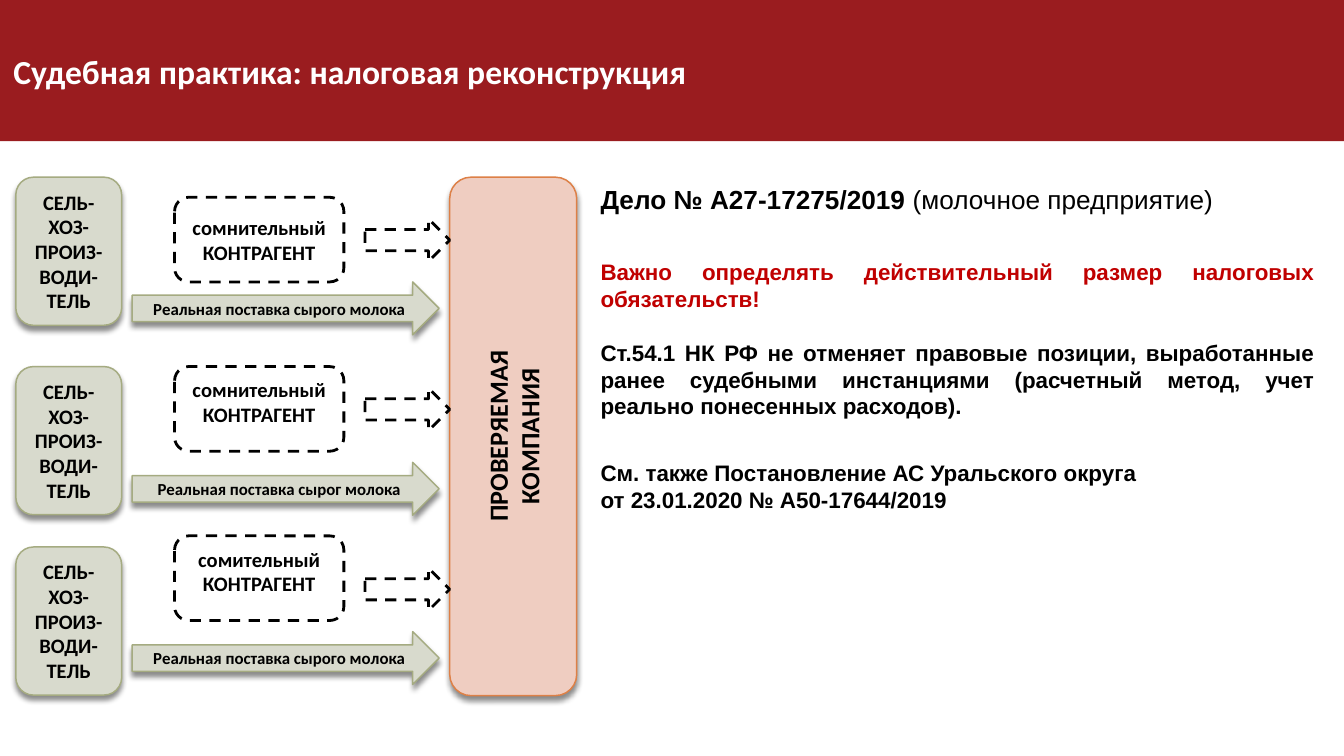
from lxml.etree import SubElement
from pptx import Presentation
from pptx.dml.color import RGBColor
from pptx.enum.dml import MSO_LINE
from pptx.enum.shapes import MSO_SHAPE
from pptx.enum.text import MSO_ANCHOR, PP_ALIGN
from pptx.oxml.ns import qn
from pptx.util import Cm, Pt

COLORS = {
    "banner": "9A1C1F",
    "white": "FFFFFF",
    "black": "000000",
    "accent": "C00000",
    "farm": "D8DACD",
    "farm_line": "A5AB81",
    "company": "EFCDC1",
    "company_line": "DD8047",
}


def set_text(frame, text, size, font="Calibri", color="black",
             align=PP_ALIGN.CENTER, anchor=MSO_ANCHOR.MIDDLE):
    """Fill the first paragraph of a frame with bold text."""
    frame.word_wrap = True
    frame.vertical_anchor = anchor
    para = frame.paragraphs[0]
    para.text = text
    para.alignment = align
    para.font.name = font
    para.font.size = Pt(size)
    para.font.bold = True
    para.font.color.rgb = RGBColor.from_string(COLORS[color])
    return para


def add_block(kind, left, top, width, height, fill=None):
    """Add a dashed white shape, or a filled one with a soft shadow."""
    block = slide.shapes.add_shape(kind, Cm(left), Cm(top), Cm(width), Cm(height))
    block.shadow.inherit = False
    block.fill.solid()
    block.fill.fore_color.rgb = RGBColor.from_string(COLORS[fill or "white"])
    line_color = f"{fill}_line" if fill else "black"
    block.line.color.rgb = RGBColor.from_string(COLORS[line_color])
    block.line.width = Pt(0.79 if fill else 1.5)
    block.text_frame.margin_left = block.text_frame.margin_right = Cm(0.1)
    if fill:
        effects = block._element.spPr.find(qn("a:effectLst"))
        shadow = SubElement(effects, qn("a:outerShdw"), blurRad=str(Pt(3)),
                            dist=str(Pt(2.4)), dir="5400000", rotWithShape="0")
        shade = SubElement(shadow, qn("a:srgbClr"), val=COLORS["black"])
        SubElement(shade, qn("a:alpha"), val="45000")
    else:
        block.line.dash_style = MSO_LINE.DASH
    return block


deck = Presentation()
deck.slide_width = Cm(25.4)
deck.slide_height = Cm(14.29)
slide = deck.slides.add_slide(deck.slide_layouts[5])

# Title banner
title = slide.shapes.title
title.left, title.top, title.width, title.height = Cm(0), Cm(0), Cm(25.4), Cm(2.67)
title.fill.solid()
title.fill.fore_color.rgb = RGBColor.from_string(COLORS["banner"])
set_text(title.text_frame, "Судебная практика: налоговая реконструкция", 18,
         color="white", align=PP_ALIGN.LEFT)

# Audited company
company = add_block(MSO_SHAPE.ROUNDED_RECTANGLE, 8.5, 3.35, 2.4, 9.8, "company")
set_text(company.text_frame, "ПРОВЕРЯЕМАЯ\vКОМПАНИЯ", 14)
company._element.txBody.find(qn("a:bodyPr")).set("vert", "vert270")

# Supply chains: tops of farm, partner, doubtful arrow and real supply arrow
chains = [
    (3.35, 3.73, 4.14, 5.33, "сомнительный", "сырого", MSO_ANCHOR.MIDDLE),
    (6.93, 6.93, 7.34, 8.74, "сомнительный", "сырог", MSO_ANCHOR.TOP),
    (10.34, 10.13, 10.74, 11.94, "сомительный", "сырого", MSO_ANCHOR.TOP),
]
for farm_top, partner_top, doubt_top, supply_top, doubt, raw, anchor in chains:
    farm = add_block(MSO_SHAPE.ROUNDED_RECTANGLE, 0.3, farm_top, 2, 2.8, "farm")
    set_text(farm.text_frame, "СЕЛЬ-\vХОЗ-\vПРОИЗ-\vВОДИ-\vТЕЛЬ", 11)

    partner = add_block(MSO_SHAPE.ROUNDED_RECTANGLE, 3.3, partner_top, 3.2, 1.6)
    set_text(partner.text_frame, f"{doubt}\vКОНТРАГЕНТ", 11, anchor=anchor)

    add_block(MSO_SHAPE.RIGHT_ARROW, 6.9, doubt_top, 1.6, 0.8)

    supply = add_block(MSO_SHAPE.RIGHT_ARROW, 2.5, supply_top, 5.8, 1, "farm")
    supply.text_frame.margin_top = supply.text_frame.margin_bottom = Cm(0)
    set_text(supply.text_frame, f"Реальная поставка {raw} молока", 9)

# Case notes: top, width, height, size, colour, alignment, text
notes = [
    (3.35, 14.3, 1.45, 14, "black", PP_ALIGN.LEFT, "Дело № А27-17275/2019 "),
    (4.75, 14, 1.2, 12, "accent", PP_ALIGN.JUSTIFY,
     "Важно определять действительный размер налоговых обязательств!"),
    (6.28, 14, 1.8, 12, "black", PP_ALIGN.JUSTIFY,
     "Ст.54.1 НК РФ не отменяет правовые позиции, выработанные ранее судебными "
     "инстанциями (расчетный метод, учет реально понесенных расходов)."),
    (8.55, 12.9, 1.27, 12, "black", PP_ALIGN.LEFT,
     "См. также Постановление АС\u00a0Уральского округа\v"
     "от\u00a023.01.2020 № А50-17644/2019"),
]
for top, width, height, size, color, align, text in notes:
    box = slide.shapes.add_textbox(Cm(11.1), Cm(top), Cm(width), Cm(height))
    para = set_text(box.text_frame, text, size, "Arial", color, align, MSO_ANCHOR.TOP)
    if text.startswith("Дело"):
        span = para.add_run()
        span.text = "(молочное предприятие)"
        span.font.bold = False

deck.save("out.pptx")
